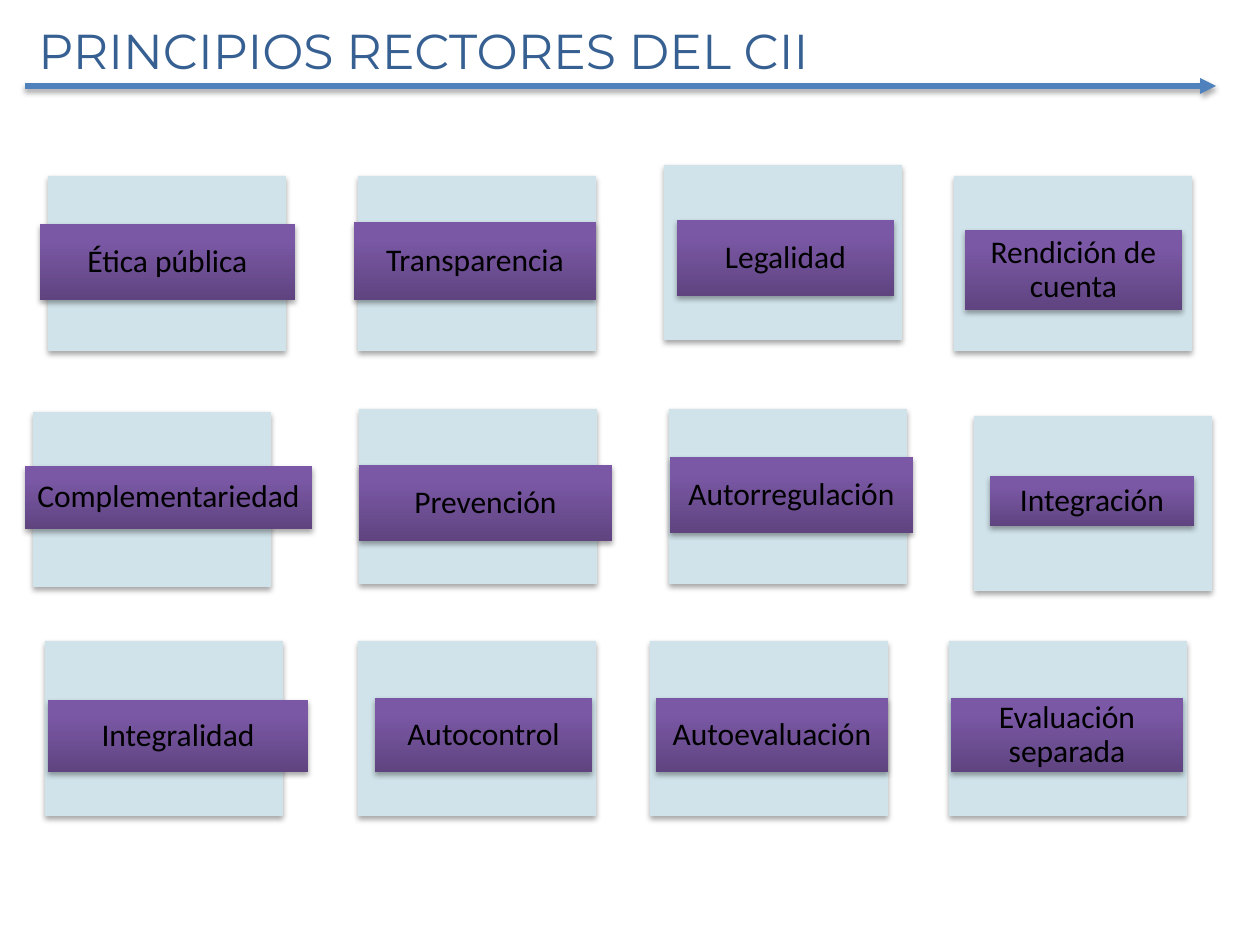
from typing import NamedTuple

from lxml.etree import SubElement
from pptx import Presentation
from pptx.dml.color import RGBColor
from pptx.enum.shapes import MSO_CONNECTOR, MSO_SHAPE
from pptx.enum.text import MSO_ANCHOR, MSO_AUTO_SIZE, PP_ALIGN
from pptx.oxml.ns import qn
from pptx.shapes.autoshape import Shape
from pptx.slide import Slide
from pptx.util import Emu, Pt

PIXELS_PER_INCH = 126
CARD_WIDTH, CARD_HEIGHT = 238, 175
LABEL_INSET = 5

CARD_BLUE = RGBColor(0xD0, 0xE3, 0xEA)
DARK_PURPLE = RGBColor(0x5F, 0x44, 0x80)
LIGHT_PURPLE = RGBColor(0x7B, 0x58, 0xA6)
ARROW_BLUE = RGBColor(0x4F, 0x81, 0xBD)
TITLE_BLUE = RGBColor(0x37, 0x60, 0x92)
BLACK = RGBColor(0x00, 0x00, 0x00)


class Box(NamedTuple):
    left: int
    top: int
    width: int
    height: int


class Principle(NamedTuple):
    name: str
    card_left: int
    card_top: int
    label: Box


PRINCIPLES = [
    Principle("Ética pública", 48, 176, Box(40, 224, 255, 76)),
    Principle("Transparencia", 358, 176, Box(354, 222, 242, 78)),
    Principle("Legalidad", 664, 165, Box(677, 220, 217, 76)),
    Principle("Rendición de cuenta", 954, 176, Box(965, 230, 217, 80)),
    Principle("Complementariedad", 33, 412, Box(25, 466, 287, 63)),
    Principle("Prevención", 359, 409, Box(359, 465, 253, 76)),
    Principle("Autorregulación", 669, 409, Box(670, 457, 243, 76)),
    Principle("Integración", 974, 416, Box(990, 476, 204, 50)),
    Principle("Integralidad", 45, 641, Box(48, 700, 260, 72)),
    Principle("Autocontrol", 358, 641, Box(375, 698, 217, 74)),
    Principle("Autoevaluación", 650, 641, Box(656, 698, 232, 74)),
    Principle("Evaluación separada", 949, 641, Box(951, 698, 232, 74)),
]


def px(value: int) -> Emu:
    return Emu(round(value * 914400 / PIXELS_PER_INCH))


def add_shadow(properties) -> None:
    effects = properties.find(qn("a:effectLst"))
    if effects is None:
        effects = SubElement(properties, qn("a:effectLst"))
    shadow = SubElement(
        effects, qn("a:outerShdw"),
        blurRad="40000", dist="23000", dir="5400000", rotWithShape="0",
    )
    color = SubElement(shadow, qn("a:srgbClr"), val="000000")
    SubElement(color, qn("a:alpha"), val="35000")


def add_rectangle(slide: Slide, box: Box) -> Shape:
    shape = slide.shapes.add_shape(MSO_SHAPE.RECTANGLE, *map(px, box))
    shape.shadow.inherit = False
    shape.line.fill.background()
    add_shadow(shape._element.spPr)
    return shape


def fill_with_purple(shape: Shape) -> None:
    fill = shape.fill
    fill.gradient()
    fill.gradient_angle = 90
    dark, light = fill.gradient_stops
    dark.color.rgb, dark.position = DARK_PURPLE, 0
    light.color.rgb, light.position = LIGHT_PURPLE, 0.8


def add_principle(slide: Slide, principle: Principle) -> None:
    card_box = Box(principle.card_left, principle.card_top, CARD_WIDTH, CARD_HEIGHT)
    card = add_rectangle(slide, card_box)
    card.fill.solid()
    card.fill.fore_color.rgb = CARD_BLUE

    label = add_rectangle(slide, principle.label)
    fill_with_purple(label)
    frame = label.text_frame
    frame.word_wrap = True
    frame.vertical_anchor = MSO_ANCHOR.MIDDLE
    frame.margin_left = frame.margin_right = px(LABEL_INSET)
    frame.margin_top = frame.margin_bottom = px(LABEL_INSET)
    paragraph = frame.paragraphs[0]
    paragraph.text = principle.name
    paragraph.alignment = PP_ALIGN.CENTER
    paragraph.line_spacing = 0.9
    paragraph.font.name = "Calibri"
    paragraph.font.size = Pt(18)
    paragraph.font.color.rgb = BLACK


def add_title_arrow(slide: Slide) -> None:
    arrow = slide.shapes.add_connector(
        MSO_CONNECTOR.STRAIGHT, px(25), px(86), px(1216), px(86)
    )
    arrow.line.color.rgb = ARROW_BLUE
    arrow.line.width = Pt(3)
    SubElement(arrow.line._get_or_add_ln(), qn("a:tailEnd"), type="triangle")
    add_shadow(arrow._element.spPr)


def add_title(slide: Slide, text: str) -> None:
    title = slide.shapes.add_textbox(px(26), px(14), px(1120), px(72))
    frame = title.text_frame
    frame.word_wrap = True
    frame.auto_size = MSO_AUTO_SIZE.SHAPE_TO_FIT_TEXT
    paragraph = frame.paragraphs[0]
    paragraph.text = text
    paragraph.font.name = "Montserrat"
    paragraph.font.size = Pt(28)
    paragraph.font.color.rgb = TITLE_BLUE


def main() -> None:
    presentation = Presentation()
    presentation.slide_width = px(1260)
    presentation.slide_height = px(945)
    slide = presentation.slides.add_slide(presentation.slide_layouts[6])
    for principle in PRINCIPLES:
        add_principle(slide, principle)
    add_title_arrow(slide)
    add_title(slide, "PRINCIPIOS RECTORES DEL CII")
    presentation.save("out.pptx")


if __name__ == "__main__":
    main()
